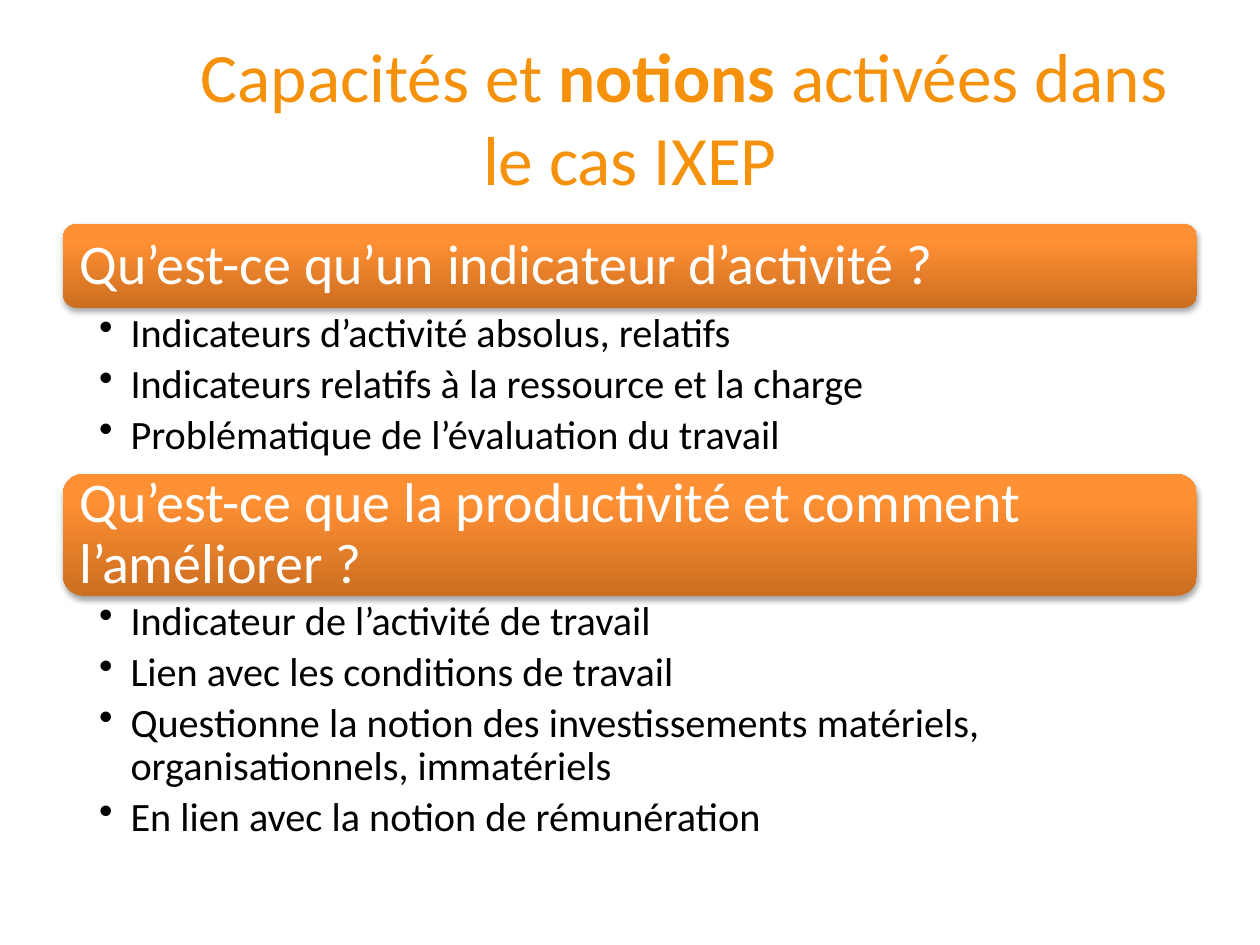
import pptx
import pptx.dml.color
import pptx.enum.shapes
import pptx.enum.text
import pptx.oxml
import pptx.util
from pptx.oxml.ns import nsdecls

Pt = pptx.util.Pt
FONT = "Calibri"
MIDDLE = pptx.enum.text.MSO_ANCHOR.MIDDLE

# Content
TITLE = [("Capacités et ", False), ("notions", True), (" activées dans le cas IXEP", False)]
# heading, heading height, bullet list height, bullets
SECTIONS = [
    ("Qu’est-ce qu’un indicateur d’activité ?", 48, 95, [
        "Indicateurs d’activité absolus, relatifs",
        "Indicateurs relatifs à la ressource et la charge",
        "Problématique de l’évaluation du travail",
    ]),
    ("Qu’est-ce que la productivité et comment l’améliorer ?", 69.5, 152, [
        "Indicateur de l’activité de travail",
        "Lien avec les conditions de travail",
        "Questionne la notion des investissements matériels, "
        "organisationnels, immatériels",
        "En lien avec la notion de rémunération",
    ]),
]
GRADIENT = [(0, "CC6E20"), (80, "FF9034"), (100, "FF9136")]

# Layout
LEFT, WIDTH = 36, 648
SECTIONS_TOP = 128
CORNER = 1 / 6
HEADING_INSET = 9.4
BULLET_INDENT = 18
TITLE_INDENT = 62


def style(font, size, colour, bold=False):
    font.name = FONT
    font.size = Pt(size)
    font.bold = bold
    font.color.rgb = pptx.dml.color.RGBColor.from_string(colour)


def set_insets(frame, left, top, right, bottom):
    frame.margin_left, frame.margin_top = Pt(left), Pt(top)
    frame.margin_right, frame.margin_bottom = Pt(right), Pt(bottom)


def add_heading(page, text, top, height):
    bar = page.shapes.add_shape(
        pptx.enum.shapes.MSO_SHAPE.ROUNDED_RECTANGLE,
        Pt(LEFT), Pt(top), Pt(WIDTH), Pt(height))
    bar.adjustments[0] = CORNER
    bar.line.fill.background()
    bar.shadow.inherit = False

    # Gradient and soft shadow
    properties = bar.element.spPr
    stops = "".join(
        f'<a:gs pos="{position * 1000}"><a:srgbClr val="{colour}"/></a:gs>'
        for position, colour in GRADIENT)
    properties.insert(2, pptx.oxml.parse_xml(
        f'<a:gradFill {nsdecls("a")} rotWithShape="1"><a:gsLst>{stops}</a:gsLst>'
        '<a:lin ang="16200000" scaled="0"/></a:gradFill>'))
    properties[-1].append(pptx.oxml.parse_xml(
        f'<a:outerShdw {nsdecls("a")} blurRad="{Pt(3.1)}" dist="{Pt(1.8)}" '
        'dir="5400000" rotWithShape="0">'
        '<a:srgbClr val="000000"><a:alpha val="35000"/></a:srgbClr></a:outerShdw>'))

    # The rounded corners already push the text inwards
    inset = HEADING_INSET - 0.29 * CORNER * height
    frame = bar.text_frame
    frame.word_wrap = True
    frame.vertical_anchor = MIDDLE
    set_insets(frame, inset, 0, inset, 0)
    frame.text = text
    para = frame.paragraphs[0]
    para.alignment = pptx.enum.text.PP_ALIGN.LEFT
    para.line_spacing = 0.9
    style(para.runs[0].font, 32, "FFFFFF")


def add_bullets(page, bullets, top, height):
    box = page.shapes.add_textbox(Pt(LEFT), Pt(top), Pt(WIDTH), Pt(height))
    frame = box.text_frame
    frame.word_wrap = True
    set_insets(frame, 20.6, 2.9, 16.5, 2.9)
    frame.text = "\n".join(bullets)
    for para in frame.paragraphs:
        para.line_spacing = 0.9
        para.space_after = Pt(4.2)
        properties = para._p.get_or_add_pPr()
        properties.set("marL", str(Pt(BULLET_INDENT)))
        properties.set("indent", str(-Pt(BULLET_INDENT)))
        properties.append(pptx.oxml.parse_xml(
            f'<a:buChar {nsdecls("a")} char="•"/>'))
        style(para.runs[0].font, 23, "000000")


deck = pptx.Presentation()
deck.slide_width, deck.slide_height = Pt(720), Pt(540)
page = deck.slides.add_slide(deck.slide_layouts[5])

# Title, with its first line indented
title = page.shapes.title
title.left, title.top, title.width, title.height = Pt(LEFT), Pt(21.6), Pt(WIDTH), Pt(90)
title.text_frame.word_wrap = True
title.text_frame.auto_size = pptx.enum.text.MSO_AUTO_SIZE.NONE
title.text_frame.vertical_anchor = MIDDLE
para = title.text_frame.paragraphs[0]
para.alignment = pptx.enum.text.PP_ALIGN.CENTER
para._p.get_or_add_pPr().set("indent", str(Pt(TITLE_INDENT)))
for text, bold in TITLE:
    span = para.add_run()
    span.text = text
    style(span.font, 39.6, "F5910B", bold)

# Sections, stacked downwards
top = SECTIONS_TOP
for heading, heading_height, list_height, bullets in SECTIONS:
    add_heading(page, heading, top, heading_height)
    add_bullets(page, bullets, top + heading_height, list_height)
    top += heading_height + list_height

deck.save("out.pptx")
